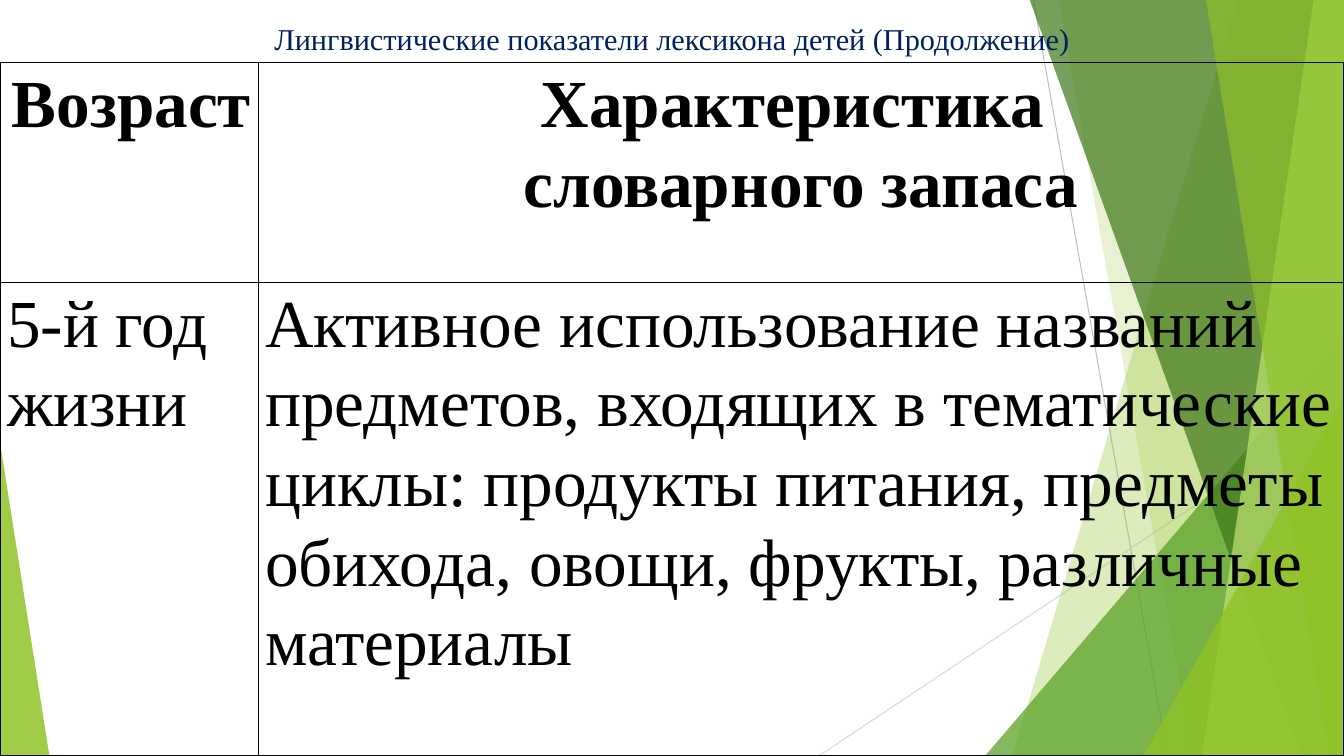
from dataclasses import dataclass
from typing import Any, Optional, Union

from pptx import Presentation
from pptx import util as u
from pptx.dml import color
from pptx.enum import shapes, text
from pptx.oxml import ns
from lxml import etree

PX = 9144
WIDTH, HEIGHT = 1333, 750
TITLE_BOTTOM = 62
FONT = "Times New Roman"
ALIGN = text.PP_ALIGN


@dataclass(frozen=True)
class Ray:
    start: tuple[int, int]
    end: tuple[int, int]
    hue: str


@dataclass(frozen=True)
class Band:
    top_x: int
    bottom_x: int
    hue: str
    opacity: int


@dataclass(frozen=True)
class Corner:
    left: int
    top: int
    width: int
    apex: int
    hue: str
    opacity: int


@dataclass(frozen=True)
class Entry:
    lines: tuple[str, ...]
    align: Optional[ALIGN] = None
    bold: bool = False


RAYS = (
    Ray((1025, 0), (1158, HEIGHT), "BFBFBF"),
    Ray((WIDTH, 403), (812, HEIGHT), "D9D9D9"),
)
FACETS: tuple[Union[Band, Corner], ...] = (
    Band(1228, 1004, "90C226", 30),
    Band(1050, 1183, "90C226", 20),
    Corner(977, 333, 356, 1, "54A021", 72),
    Band(1021, 1291, "3F7819", 70),
    Band(1303, 1192, "C0E474", 70),
    Band(1196, 1318, "90C226", 65),
    Corner(1134, 393, 199, 1, "90C226", 80),
    Corner(0, 439, 49, 0, "90C226", 85),
)
COLUMNS = (256, 1077)
ROWS = (218, 470)
ENTRIES = (
    (
        Entry(("Возраст",), ALIGN.RIGHT, True),
        Entry(("Характеристика ", "словарного запаса"), ALIGN.CENTER, True),
    ),
    (
        Entry(("5-й год жизни",)),
        Entry((
            "Активное использование названий предметов, входящих в "
            "тематические циклы: продукты питания, предметы обихода, "
            "овощи, фрукты, различные материалы",
        )),
    ),
)
CELL_FORMAT = {
    "margin_left": 7 * PX,
    "margin_right": 7 * PX,
    "margin_top": 0,
    "margin_bottom": 0,
}


def px(*lengths: int) -> list[u.Emu]:
    return [u.Emu(length * PX) for length in lengths]


def rgb(hue: str) -> color.RGBColor:
    return color.RGBColor.from_string(hue)


def apply(target: Any, values: dict[str, Any]) -> None:
    for key, value in values.items():
        setattr(target, key, value)


def write(paragraph: Any, words: str, size: float, hue: str, bold: bool = False) -> None:
    run = paragraph.add_run()
    run.text = words
    apply(run.font, {"name": FONT, "size": u.Pt(size), "bold": bold})
    run.font.color.rgb = rgb(hue)


def draw_ray(slide: Any, ray: Ray) -> None:
    line = slide.shapes.add_connector(
        shapes.MSO_CONNECTOR.STRAIGHT, *px(*ray.start, *ray.end)
    )
    line.line.width = u.Pt(0.75)
    line.line.color.rgb = rgb(ray.hue)
    etree.SubElement(line._element.spPr, ns.qn("a:effectLst"))


def draw_facet(slide: Any, facet: Union[Band, Corner]) -> None:
    if isinstance(facet, Band):
        outline = slide.shapes.build_freeform(facet.top_x, -1, scale=PX)
        outline.add_line_segments(
            [(WIDTH, -1), (WIDTH, HEIGHT), (facet.bottom_x, HEIGHT)], close=True
        )
        shape = outline.convert_to_shape()
    else:
        shape = slide.shapes.add_shape(
            shapes.MSO_SHAPE.ISOSCELES_TRIANGLE,
            *px(facet.left, facet.top, facet.width, HEIGHT - facet.top),
        )
        shape.adjustments[0] = facet.apex
    shape.shadow.inherit = False
    shape.line.fill.background()
    shape.fill.solid()
    shape.fill.fore_color.rgb = rgb(facet.hue)
    tint = shape._element.spPr.find(".//" + ns.qn("a:srgbClr"))
    etree.SubElement(tint, ns.qn("a:alpha"), val=str(facet.opacity * 1000))


def draw_title(slide: Any) -> None:
    heading = slide.shapes.add_textbox(*px(0, 14, WIDTH, TITLE_BOTTOM - 14)).text_frame
    apply(heading, {"word_wrap": True, "vertical_anchor": text.MSO_ANCHOR.MIDDLE})
    paragraph = heading.paragraphs[0]
    paragraph.alignment = ALIGN.CENTER
    write(
        paragraph,
        "Лингвистические показатели лексикона детей (Продолжение)",
        21.6,
        "002060",
    )


def fill_cell(cell: Any, entry: Entry) -> None:
    apply(cell, CELL_FORMAT)
    properties = cell._tc.get_or_add_tcPr()
    for side in ("lnL", "lnR", "lnT", "lnB"):
        border = etree.SubElement(properties, ns.qn(f"a:{side}"), w=str(u.Pt(1)))
        ink = etree.SubElement(border, ns.qn("a:solidFill"))
        etree.SubElement(ink, ns.qn("a:srgbClr"), val="000000")
    cell.fill.background()
    frame = cell.text_frame
    for index, words in enumerate(entry.lines):
        paragraph = frame.add_paragraph() if index else frame.paragraphs[0]
        apply(paragraph, {"alignment": entry.align, "line_spacing": 1.07})
        write(paragraph, words, 48, "000000", entry.bold)


def draw_vocabulary(slide: Any) -> None:
    vocabulary = slide.shapes.add_table(
        len(ROWS), len(COLUMNS), *px(0, TITLE_BOTTOM, sum(COLUMNS), sum(ROWS))
    ).table
    apply(vocabulary, {"first_row": False, "horz_banding": False})
    for column, width in zip(vocabulary.columns, px(*COLUMNS)):
        column.width = width
    for row, height, entries in zip(vocabulary.rows, px(*ROWS), ENTRIES):
        row.height = height
        for cell, entry in zip(row.cells, entries):
            fill_cell(cell, entry)


def main() -> None:
    deck = Presentation()
    deck.slide_width, deck.slide_height = px(WIDTH, HEIGHT)
    slide = deck.slides.add_slide(deck.slide_layouts[6])
    for ray in RAYS:
        draw_ray(slide, ray)
    for facet in FACETS:
        draw_facet(slide, facet)
    draw_title(slide)
    draw_vocabulary(slide)
    deck.save("out.pptx")


if __name__ == "__main__":
    main()
